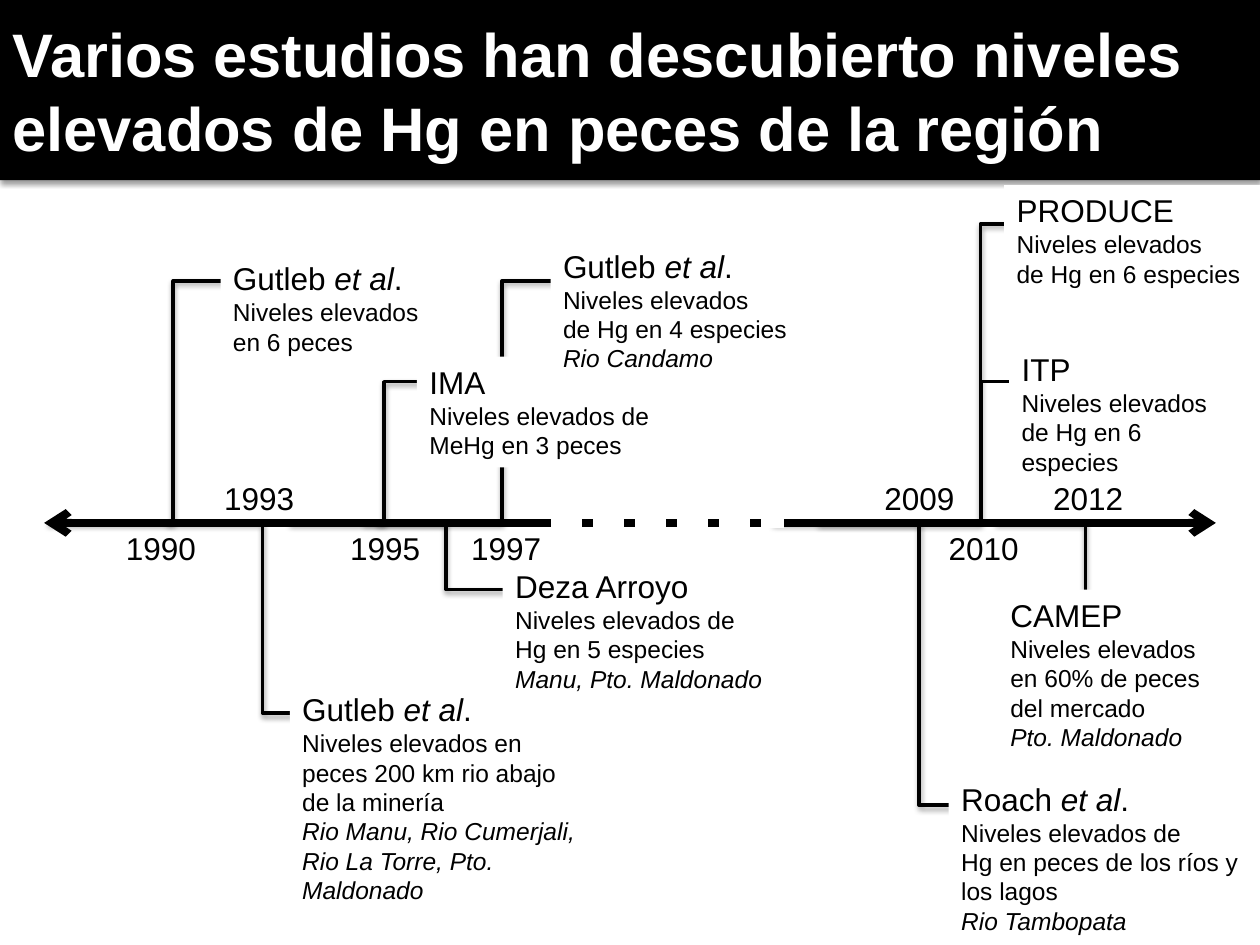
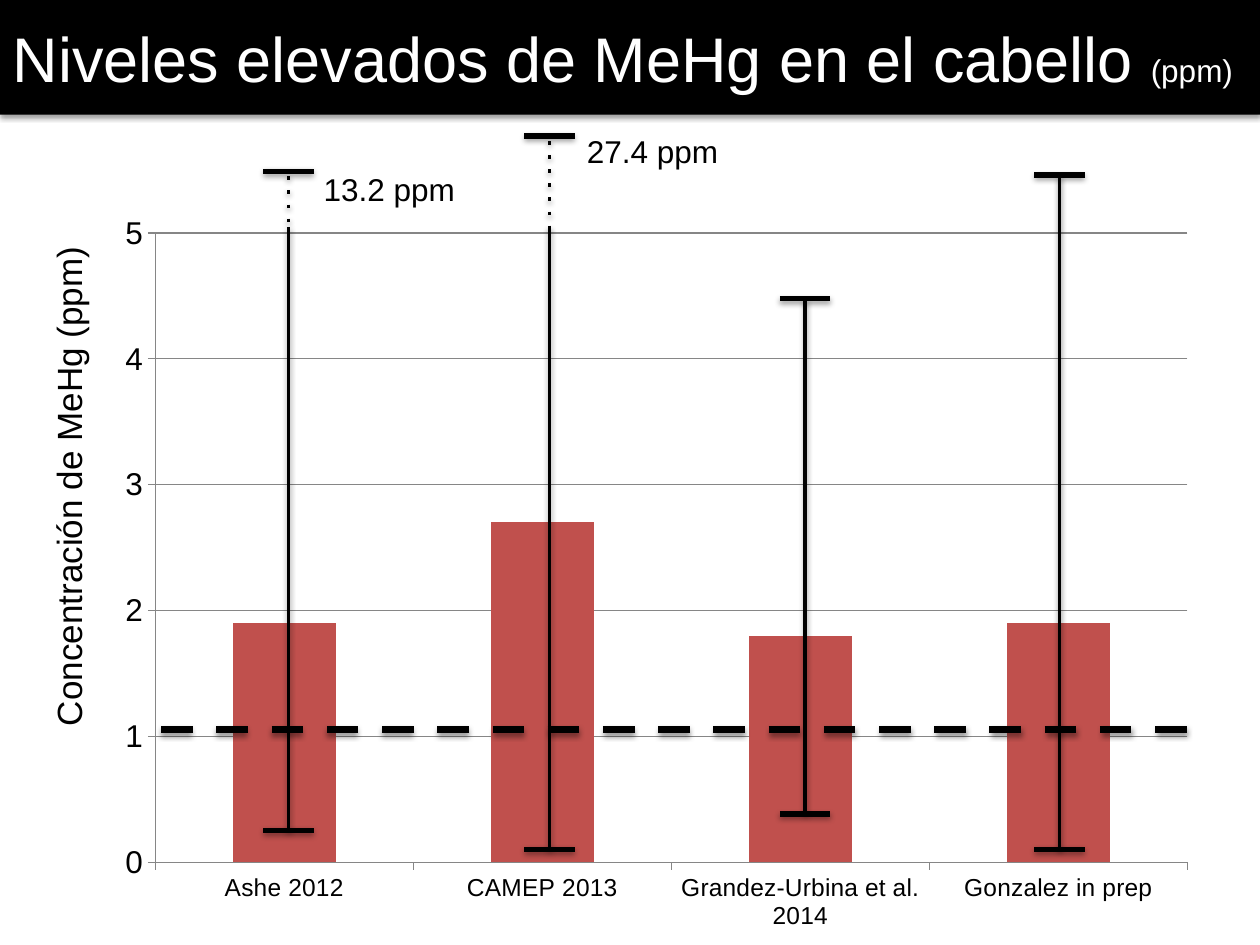
from dataclasses import dataclass

from lxml.etree import SubElement
from pptx import Presentation
from pptx.chart.data import CategoryChartData
from pptx.dml.color import RGBColor
from pptx.enum.chart import XL_CHART_TYPE, XL_TICK_MARK
from pptx.enum.shapes import MSO_CONNECTOR
from pptx.enum.text import MSO_ANCHOR, MSO_AUTO_SIZE, PP_ALIGN
from pptx.oxml import parse_xml
from pptx.oxml.ns import nsdecls, qn
from pptx.util import Emu, Pt

PX = 9144  # 100 px to the inch
TITLE_ONLY = 5


@dataclass(frozen=True)
class Theme:
    font: str = "Arial"
    ink: RGBColor = RGBColor(0, 0, 0)
    paper: RGBColor = RGBColor(255, 255, 255)
    bar: RGBColor = RGBColor(0xC0, 0x50, 0x4D)
    grid: RGBColor = RGBColor(0x86, 0x86, 0x86)
    long_title: float = 35.1
    title: int = 36
    axis_title: int = 20
    label: int = 18
    detail: int = 14
    axis_line: float = 4.5
    gap_line: float = 6
    cap_line: float = 3
    thin_line: float = 2


@dataclass(frozen=True)
class Span:
    text: str
    size: float
    italic: bool = False
    bold: bool = False


@dataclass(frozen=True)
class Study:
    author: str
    start: tuple
    end: tuple
    box: tuple
    findings: tuple
    places: tuple = ()
    cited: bool = False
    wrap: bool = True
    shadow: bool = True


class Builder:
    def __init__(self, theme):
        self.theme = theme
        self.deck = Presentation()
        self.deck.slide_width, self.deck.slide_height = self.emu(1000, 750)
        self.page = None

    @staticmethod
    def emu(*lengths):
        return [Emu(length * PX) for length in lengths]

    @staticmethod
    def set_effects(shape, shadow):
        """Replace the theme's effects by none, or by a soft shadow below."""
        effects = SubElement(shape._element.spPr, qn("a:effectLst"))
        if shadow:
            outer = SubElement(effects, qn("a:outerShdw"), blurRad="40000",
                               dist="20000", dir="5400000", rotWithShape="0")
            color = SubElement(outer, qn("a:srgbClr"), val="000000")
            SubElement(color, qn("a:alpha"), val="38000")

    def style_font(self, font, size, color=None):
        font.name = self.theme.font
        font.size = Pt(size)
        font.color.rgb = color or self.theme.ink

    def add_lines(self, frame, lines, color=None, align=PP_ALIGN.LEFT):
        """Fill the frame with one paragraph for each list of spans."""
        for index, spans in enumerate(lines):
            para = frame.add_paragraph() if index else frame.paragraphs[0]
            para.alignment = align
            for span in spans:
                run = para.add_run()
                run.text = span.text
                self.style_font(run.font, span.size, color)
                run.font.italic = span.italic
                run.font.bold = span.bold

    def titled_page(self, height, spans):
        self.page = self.deck.slides.add_slide(self.deck.slide_layouts[TITLE_ONLY])
        band = self.page.shapes.title
        band.left, band.top, band.width, band.height = self.emu(0, 0, 1000, height)
        band.fill.solid()
        band.fill.fore_color.rgb = self.theme.ink
        self.set_effects(band, shadow=True)
        frame = band.text_frame
        frame.auto_size = MSO_AUTO_SIZE.NONE
        frame.vertical_anchor = MSO_ANCHOR.MIDDLE
        self.add_lines(frame, [spans], self.theme.paper)

    def text(self, place, lines, wrap=True, filled=False, align=PP_ALIGN.LEFT):
        box = self.page.shapes.add_textbox(*self.emu(*place))
        if filled:
            box.fill.solid()
            box.fill.fore_color.rgb = self.theme.paper
        box.text_frame.word_wrap = wrap
        box.text_frame.auto_size = MSO_AUTO_SIZE.SHAPE_TO_FIT_TEXT
        self.add_lines(box.text_frame, lines, align=align)
        return box

    def line(self, start, end, width, kind=MSO_CONNECTOR.STRAIGHT, color=None,
             dash=None, arrows=False, shadow=True):
        connector = self.page.shapes.add_connector(kind, *self.emu(*start, *end))
        connector.line.color.rgb = color or self.theme.ink
        connector.line.width = Pt(width)
        outline = connector._element.spPr.find(qn("a:ln"))
        if dash:
            SubElement(outline, qn("a:prstDash"), val=dash)
        if arrows:
            for tag in ("a:headEnd", "a:tailEnd"):
                SubElement(outline, qn(tag), type="arrow")
        self.set_effects(connector, shadow)

    def column_chart(self, place, categories, values, inner):
        """Draw one series; inner is the plot's x, y, w, h as chart fractions."""
        data = CategoryChartData()
        data.categories = categories
        data.add_series("Series 1", values)
        chart = self.page.shapes.add_chart(
            XL_CHART_TYPE.COLUMN_CLUSTERED, *self.emu(*place), data).chart
        chart.has_legend = chart.has_title = False
        plot = chart.plots[0]
        plot.gap_width = 150
        plot.vary_by_categories = False
        fill = plot.series[0].format.fill
        fill.solid()
        fill.fore_color.rgb = self.theme.bar

        axes = ((chart.category_axis, self.theme.detail),
                (chart.value_axis, self.theme.label))
        for axis, size in axes:
            self.style_font(axis.tick_labels.font, size)
            axis.major_tick_mark = XL_TICK_MARK.OUTSIDE
            axis.minor_tick_mark = XL_TICK_MARK.NONE
            axis.format.line.color.rgb = self.theme.grid
        scale = chart.value_axis
        scale.minimum_scale, scale.maximum_scale, scale.major_unit = 0, 5, 1
        scale.has_major_gridlines = True
        scale.major_gridlines.format.line.color.rgb = self.theme.grid
        self.place_plot(chart, inner)

    @staticmethod
    def place_plot(chart, inner):
        area = chart._chartSpace.chart.plotArea
        for layout in area.findall(qn("c:layout")):
            area.remove(layout)
        sizes = "".join(f'<c:{tag} val="{value}"/>' for tag, value in zip("xywh", inner))
        area.insert(0, parse_xml(
            f'<c:layout {nsdecls("c")}><c:manualLayout><c:layoutTarget val="inner"/>'
            f'<c:xMode val="edge"/><c:yMode val="edge"/>{sizes}'
            '</c:manualLayout></c:layout>'))


AXIS_Y = 415
ABOVE, BELOW = 375, 415
YEARS = (
    ("1990", 90, BELOW), ("1993", 168, ABOVE), ("1995", 268, BELOW),
    ("1997", 364, BELOW), ("2009", 692, ABOVE), ("2010", 743, BELOW),
    ("2012", 826, ABOVE),
)
STUDIES = (
    Study("Gutleb", (38, AXIS_Y), (237, 223), (175, 201, 169, 88),
          ("Niveles elevados", "en 6 peces"), cited=True, wrap=False),
    Study("Gutleb", (132, AXIS_Y), (285, 566), (230, 543, 240, 182),
          ("Niveles elevados en peces 200 km rio abajo de la minería",),
          ("Rio Manu, Rio Cumerjali,", "Rio La Torre, Pto. Maldonado"), cited=True),
    Study("IMA", (230, AXIS_Y), (380, 303), (331, 283, 204, 88),
          ("Niveles elevados de", "MeHg en 3 peces"), wrap=False),
    Study("Deza Arroyo", (289, AXIS_Y), (419, 468), (399, 445, 223, 111),
          ("Niveles elevados de", "Hg en 5 especies"),
          ("Manu, Pto. Maldonado",), wrap=False),
    Study("Gutleb", (299, AXIS_Y), (498, 223), (437, 191, 201, 111),
          ("Niveles elevados", "de Hg en 4 especies"),
          ("Rio Candamo",), cited=True, wrap=False),
    Study("Roach", (613, AXIS_Y), (846, 639), (753, 614, 240, 135),
          ("Niveles elevados de", "Hg en peces de los ríos y los lagos"),
          ("Rio Tambopata",), cited=True),
    Study("CAMEP", (790, AXIS_Y), (933, 504), (792, 468, 189, 135),
          ("Niveles elevados en 60% de peces del mercado",), ("Pto. Maldonado",)),
    Study("PRODUCE", (649, AXIS_Y), (907, 178), (797, 147, 203, 88),
          ("Niveles elevados", "de Hg en 6 especies")),
    Study("ITP", (704, AXIS_Y), (853, 303), (801, 273, 180, 111),
          ("Niveles elevados", "de Hg en 6 especies"), shadow=False),
)


def study_lines(study, theme):
    if study.cited:
        heading = [Span(study.author + " ", theme.label),
                   Span("et al", theme.label, italic=True), Span(".", theme.label)]
    else:
        heading = [Span(study.author, theme.label)]
    findings = [[Span(text, theme.detail)] for text in study.findings]
    places = [[Span(text, theme.detail, italic=True)] for text in study.places]
    return [heading, *findings, *places]


def build_timeline(builder):
    theme = builder.theme
    builder.titled_page(143, [Span(
        "Varios estudios han descubierto niveles elevados de Hg en peces de la región",
        theme.long_title, bold=True)])
    builder.line((35, AXIS_Y), (965, AXIS_Y), theme.axis_line, arrows=True, shadow=False)
    for study in STUDIES:
        builder.line(study.start, study.end, theme.thin_line,
                     MSO_CONNECTOR.ELBOW, shadow=study.shadow)
    builder.line((437, AXIS_Y), (622, AXIS_Y), theme.gap_line,
                 color=theme.paper, dash="sysDash", shadow=False)
    for study in STUDIES:
        builder.text(study.box, study_lines(study, theme), study.wrap, filled=True)
    for year, left, top in YEARS:
        builder.text((left, top, 76, 40), [[Span(year, theme.label)]], wrap=False)


# Centre, top, bottom, and where the solid part starts
RANGES = (
    (229, 136, 659, 180),
    (436, 108, 674, 182),
    (639, 237, 646, 237),
    (841, 139, 674, 139),
)
HALF_CAP = 20


def build_hair_levels(builder):
    theme = builder.theme
    builder.titled_page(91, [
        Span("Niveles elevados de MeHg en el cabello ", theme.title),
        Span("(ppm)", theme.label)])
    builder.column_chart(
        (82, 159, 878, 591),
        ("Ashe 2012", "CAMEP 2013", "Grandez-Urbina et al. 2014", "Gonzalez in prep"),
        (1.9, 2.7, 1.8, 1.9), inner=(0.047, 0.044, 0.933, 0.845))
    builder.line((128, 579), (942, 579), theme.axis_line, dash="dash")
    axis_title = builder.text(
        (-150, 364, 409, 44), [[Span("Concentración de MeHg (ppm)", theme.axis_title)]],
        wrap=False, align=PP_ALIGN.CENTER)
    axis_title.rotation = 270
    for center, top, bottom, solid_top in RANGES:
        for y in (top, bottom):
            builder.line((center - HALF_CAP, y), (center + HALF_CAP, y), theme.cap_line)
        builder.line((center, solid_top), (center, bottom), theme.thin_line)
        if solid_top > top:
            builder.line((center, top + 4), (center, solid_top),
                         theme.thin_line, dash="dot")
    for maximum, left, top in (("13.2 ppm", 247, 130), ("27.4 ppm", 456, 100)):
        builder.text((left, top, 135, 40), [[Span(maximum, theme.label)]])


def main():
    builder = Builder(Theme())
    build_timeline(builder)
    build_hair_levels(builder)
    builder.deck.save("out.pptx")


if __name__ == "__main__":
    main()
